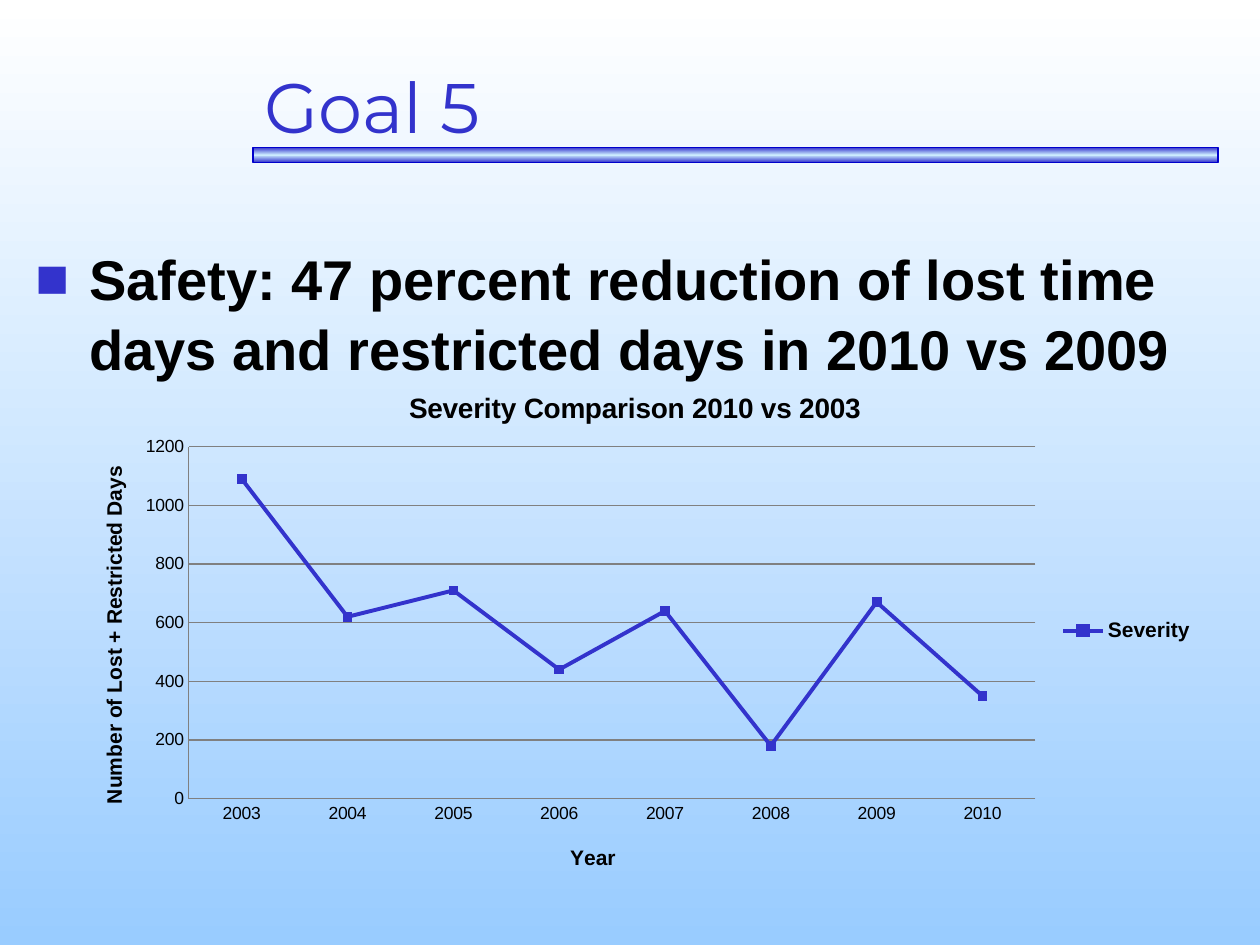
import copy
import pptx
import pptx.chart.data
import pptx.dml.color
import pptx.enum.chart
import pptx.enum.shapes
import pptx.enum.text
import pptx.oxml
import pptx.oxml.ns
import pptx.util
from pptx.util import Inches

Pt = pptx.util.Pt
RGB = pptx.dml.color.RGBColor.from_string
qn = pptx.oxml.ns.qn
enums = pptx.enum.chart

hues = {"blue": "3333CC", "edge": "0000CC", "pale": "CCECFF", "sky": "99CCFF",
        "white": "FFFFFF", "black": "000000", "grey": "808080"}


def dress(font, hue, **form):
    for key, val in form.items():
        setattr(font, key, val)
    font.color.rgb = RGB(hues[hue])


def place(box, spot, **marks):
    for old in box.findall(qn("c:layout")):
        box.remove(old)
    tags = "".join(f'<c:{key} val="{val}"/>' for key, val in marks.items())
    box.insert(spot, pptx.oxml.parse_xml(
        f'<c:layout {pptx.oxml.ns.nsdecls("c")}><c:manualLayout>{tags}'
        '</c:manualLayout></c:layout>'))


deck = pptx.Presentation()
deck.slide_width, deck.slide_height = Inches(10), Inches(7.5)
slide = deck.slides.add_slide(deck.slide_layouts[1])

back = slide.background.fill
back.gradient()
back.gradient_angle = 270
for stop, hue in zip(back.gradient_stops, ("white", "sky")):
    stop.color.rgb = RGB(hues[hue])

bar = slide.shapes.add_shape(pptx.enum.shapes.MSO_SHAPE.RECTANGLE,
                             Inches(2.01), Inches(1.17), Inches(7.66), Inches(0.12))
bar.shadow.inherit = False
bar.line.color.rgb = RGB(hues["edge"])
bar.line.width = Pt(1)
bar.fill.gradient()
bar.fill.gradient_angle = 270
stops = bar._element.xpath(".//a:gsLst")[0]
stops.insert(1, copy.deepcopy(stops[0]))
for stop, hue, pos in zip(bar.fill.gradient_stops, ("blue", "pale", "blue"), (0, 0.5, 1)):
    stop.color.rgb = RGB(hues[hue])
    stop.position = pos

title, body = slide.placeholders
spots = ((title, (2, 0.33, 8, 0.89)), (body, (0.18, 1.83, 9.32, 5.58)))
for hold, spot in spots:
    hold.left, hold.top, hold.width, hold.height = map(Inches, spot)

title.text_frame.text = "Goal 5"
title.text_frame.vertical_anchor = pptx.enum.text.MSO_ANCHOR.BOTTOM
head = title.text_frame.paragraphs[0]
head.alignment = pptx.enum.text.PP_ALIGN.LEFT
dress(head.runs[0].font, "blue", name="Montserrat", size=Pt(40), bold=False)

body.text_frame.text = ("Safety: 47 percent reduction of lost time days "
                        "and restricted days in 2010 vs 2009")
body.text_frame.margin_top = Inches(0.09)
item = body.text_frame.paragraphs[0]
props = item._p.get_or_add_pPr()
props.set("marL", str(Inches(0.43)))
props.set("indent", str(Inches(-0.43)))
for tag in (f'buClr %s><a:srgbClr val="{hues["blue"]}"/></a:buClr>',
            'buFont %s typeface="Arial"/>', 'buChar %s char="■"/>'):
    props.append(pptx.oxml.parse_xml("<a:" + tag % pptx.oxml.ns.nsdecls("a")))
item.space_before = Pt(0)
item.line_spacing = 1.04
dress(item.runs[0].font, "black", name="Arial", size=Pt(32), bold=True)

data = pptx.chart.data.CategoryChartData()
data.categories = [str(year) for year in range(2003, 2011)]
data.add_series("Severity", (1090, 620, 710, 440, 640, 180, 670, 350))
chart = slide.shapes.add_chart(enums.XL_CHART_TYPE.LINE_MARKERS, Inches(0.5), Inches(2.92),
                               Inches(9.08), Inches(4.17), data).chart
dress(chart.font, "black", name="Arial", size=Pt(10))

years, days = chart.category_axis, chart.value_axis
labels = ((chart, "chart_title", "Severity Comparison 2010 vs 2003", 16),
          (years, "axis_title", "Year", 12),
          (days, "axis_title", "Number of Lost + Restricted Days", 12))
for part, key, text, size in labels:
    frame = getattr(part, key).text_frame
    frame.text = text
    dress(frame.paragraphs[0].runs[0].font, "black", name="Arial", size=Pt(size), bold=True)

days.has_major_gridlines = True
for key, val in {"minimum_scale": 0, "maximum_scale": 1200, "major_unit": 200}.items():
    setattr(days, key, val)
for axis in (years, days):
    axis.major_tick_mark = enums.XL_TICK_MARK.NONE
    axis.format.line.color.rgb = RGB(hues["grey"])
grid = days.major_gridlines.format.line
grid.color.rgb = RGB(hues["grey"])
grid.width = Pt(0.75)

chart.has_legend = True
chart.legend.position = enums.XL_LEGEND_POSITION.RIGHT
chart.legend.include_in_layout = False
dress(chart.legend.font, "black", name="Arial", size=Pt(12), bold=True)

plot = chart.plots[0]
plot.vary_by_categories = False
line = plot.series[0]
line.smooth = False
line.format.line.color.rgb = RGB(hues["blue"])
line.format.line.width = Pt(2.25)
line.marker.style = enums.XL_MARKER_STYLE.SQUARE
line.marker.size = 5
line.marker.format.fill.solid()
line.marker.format.fill.fore_color.rgb = RGB(hues["blue"])
line.marker.format.line.color.rgb = RGB(hues["blue"])

area = chart._chartSpace.xpath("c:chart/c:plotArea")[0]
place(area, 0, layoutTarget="inner", xMode="edge", yMode="edge", x=0.11, y=0.15, w=0.74, h=0.67)
for axis, x, y in ((years, 0.44, 0.9), (days, 0.03, 0.18)):
    place(axis.axis_title._element, 1, xMode="edge", yMode="edge", x=x, y=y)

deck.save("out.pptx")
